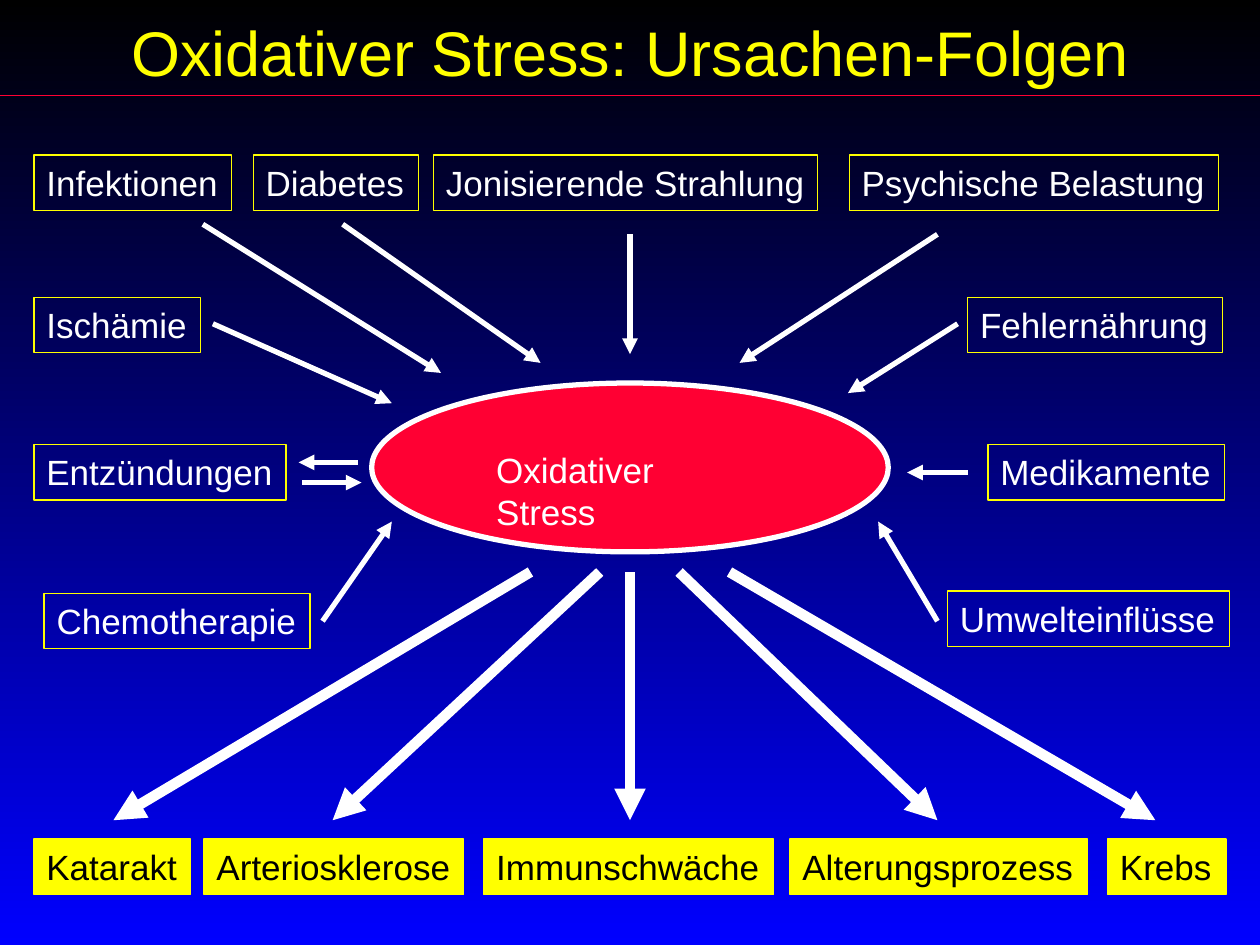
from pptx import Presentation
from pptx import util as u
from pptx.dml.color import RGBColor
from pptx.enum import shapes, text
from pptx.oxml import parse_xml
from pptx.oxml.ns import nsdecls

YELLOW, WHITE, BLACK, RED, BLUE = "FFFF00", "FFFFFF", "000000", "FF0033", "0000FF"
BOX_H = 0.44


def rgb(value):
    return RGBColor.from_string(value)


class Deck:
    """Holds the style and the current slide."""
    font = "Arial"
    size = 20

    def __init__(self, width, height):
        self.prs = Presentation()
        self.prs.slide_width, self.prs.slide_height = u.Inches(width), u.Inches(height)

    def add_slide(self, top_color, bottom_color):
        self.s = self.prs.slides.add_slide(self.prs.slide_layouts[5])
        fill = self.s.background.fill
        fill.gradient()
        fill.gradient_angle = 270
        for stop, color in zip(fill.gradient_stops, (top_color, bottom_color)):
            stop.color.rgb = rgb(color)

    def set_text(self, tf, words, color, size=None, align=text.PP_ALIGN.LEFT):
        tf.text = words
        p = tf.paragraphs[0]
        p.alignment = align
        font = p.runs[0].font
        font.name, font.size = self.font, u.Pt(size or self.size)
        font.color.rgb = rgb(color)

    def title(self, words, left, top, width, height):
        sp = self.s.shapes.title
        sp.left, sp.top = u.Inches(left), u.Inches(top)
        sp.width, sp.height = u.Inches(width), u.Inches(height)
        sp.text_frame.vertical_anchor = text.MSO_ANCHOR.MIDDLE
        self.set_text(sp.text_frame, words, YELLOW, 36, text.PP_ALIGN.CENTER)

    def shape(self, kind, left, top, width, height, fill, line, weight):
        sp = self.s.shapes.add_shape(kind, u.Inches(left), u.Inches(top),
                                     u.Inches(width), u.Inches(height))
        sp.shadow.inherit = False
        if fill:
            sp.fill.solid()
            sp.fill.fore_color.rgb = rgb(fill)
        else:
            sp.fill.background()
        sp.line.color.rgb = rgb(line)
        sp.line.width = u.Pt(weight)
        return sp

    def box(self, words, left, top, width, fill=None, color=WHITE):
        sp = self.shape(shapes.MSO_SHAPE.RECTANGLE, left, top, width, BOX_H,
                        fill, YELLOW, 0.75)
        tf = sp.text_frame
        tf.word_wrap = False
        tf.auto_size = text.MSO_AUTO_SIZE.SHAPE_TO_FIT_TEXT
        tf.vertical_anchor = text.MSO_ANCHOR.TOP
        self.set_text(tf, words, color)

    def label(self, words, left, top, width, height):
        tf = self.s.shapes.add_textbox(u.Inches(left), u.Inches(top),
                                       u.Inches(width), u.Inches(height)).text_frame
        tf.word_wrap = True
        self.set_text(tf, words, WHITE)

    def line(self, x1, y1, x2, y2, color, weight, arrow=False):
        c = self.s.shapes.add_connector(shapes.MSO_CONNECTOR.STRAIGHT, u.Inches(x1),
                                        u.Inches(y1), u.Inches(x2), u.Inches(y2))
        c.line.color.rgb = rgb(color)
        c.line.width = u.Pt(weight)
        if arrow:
            c.line._get_or_add_ln().append(
                parse_xml(f'<a:tailEnd {nsdecls("a")} type="triangle"/>'))
        c._element.spPr.append(parse_xml(f'<a:effectLst {nsdecls("a")}/>'))


CAUSES = [  # words, left, top, width
    ("Infektionen", 0.27, 1.23, 1.57),
    ("Diabetes", 2.01, 1.23, 1.31),
    ("Jonisierende Strahlung", 3.44, 1.23, 3.05),
    ("Psychische Belastung", 6.74, 1.23, 2.93),
    ("Ischämie", 0.27, 2.36, 1.32),
    ("Fehlernährung", 7.68, 2.36, 2.02),
    ("Entzündungen", 0.27, 3.53, 2),
    ("Medikamente", 7.84, 3.53, 1.88),
    ("Chemotherapie", 0.35, 4.71, 2.11),
    ("Umwelteinflüsse", 7.52, 4.69, 2.24),
]
EFFECTS = [  # words, left, width, arrow start x, arrow end x
    ("Katarakt", 0.27, 1.24, 4.21, 0.9),
    ("Arteriosklerose", 1.62, 2.06, 4.76, 2.64),
    ("Immunschwäche", 3.84, 2.3, 5, 5),
    ("Alterungsprozess", 6.27, 2.36, 5.39, 7.44),
    ("Krebs", 8.79, 0.94, 5.79, 9.17),
]
CAUSE_ARROWS = [  # start x, start y, end x, end y
    (1.61, 1.78, 3.5, 2.96),
    (2.72, 1.78, 4.29, 2.88),
    (5, 1.86, 5, 2.81),
    (7.44, 1.86, 5.87, 2.88),
    (1.69, 2.57, 3.11, 3.2),
    (7.6, 2.57, 6.73, 3.12),
    (2.84, 3.67, 2.37, 3.67),
    (2.4, 3.83, 2.87, 3.83),
    (7.68, 3.75, 7.2, 3.75),
    (2.56, 4.93, 3.11, 4.14),
    (7.44, 4.93, 6.97, 4.14),
]


def main():
    deck = Deck(10, 7.5)
    deck.add_slide(BLACK, BLUE)
    deck.title("Oxidativer Stress: Ursachen-Folgen", 0, 0.03, 10, 0.75)
    deck.line(0, 0.76, 10, 0.76, RED, 0.75)
    for cause in CAUSES:
        deck.box(*cause)
    deck.shape(shapes.MSO_SHAPE.OVAL, 2.95, 3.04, 4.1, 1.34, RED, WHITE, 3)
    deck.label("Oxidativer Stress", 3.84, 3.51, 2, 0.77)
    for arrow in CAUSE_ARROWS:
        deck.line(*arrow, WHITE, 3, arrow=True)
    for words, left, width, start, end in EFFECTS:
        deck.box(words, left, 6.66, width, YELLOW, BLACK)
        deck.line(start, 4.54, end, 6.51, WHITE, 6, arrow=True)
    deck.prs.save("out.pptx")


if __name__ == "__main__":
    main()
